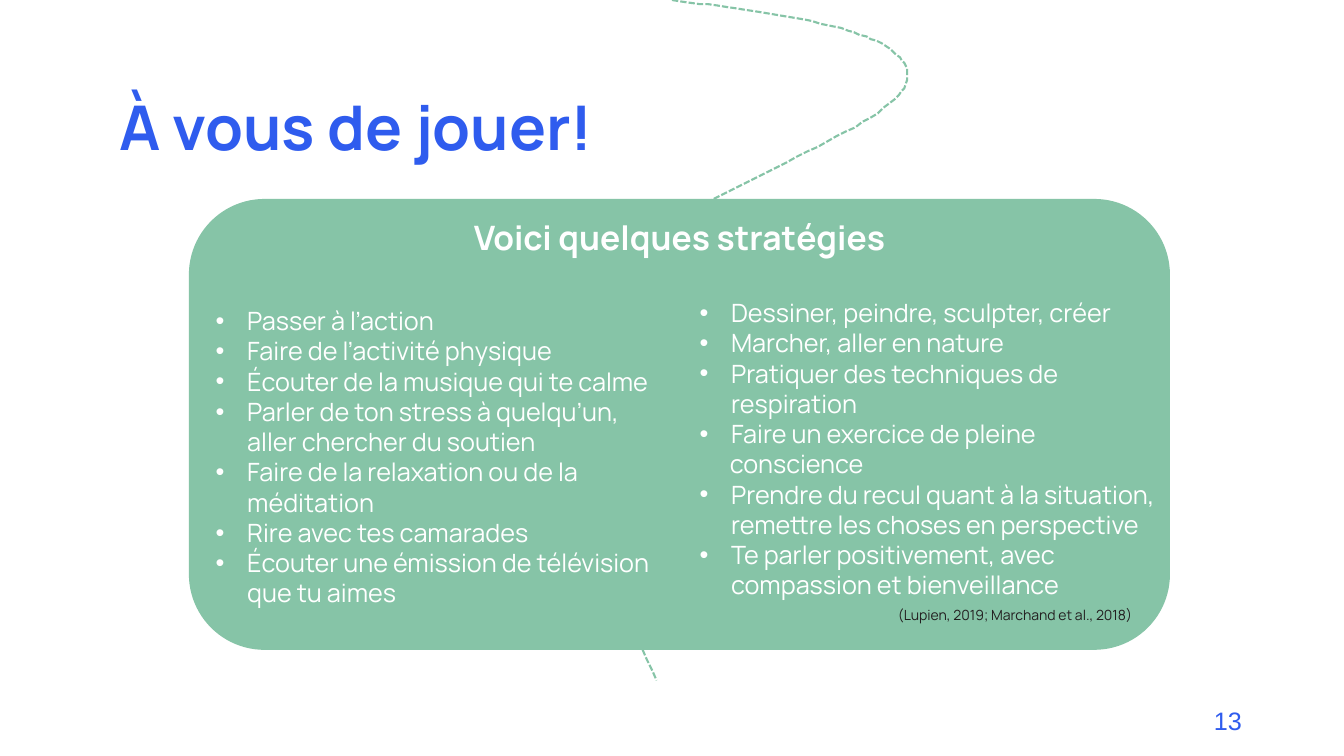
from lxml import etree
from pptx import Presentation, util as u
from pptx.dml import color
from pptx.enum import dml, shapes, text
from pptx.oxml import ns

THEME = {
    "blue": color.RGBColor.from_string("2F5CEE"),
    "green": color.RGBColor.from_string("86C4A7"),
    "white": color.RGBColor.from_string("FFFFFF"),
    "ink": color.RGBColor.from_string("231F20"),
    "font": "Manrope",
    "number_font": "Arial",
    "title": u.Pt(44),
    "heading": u.Pt(24),
    "body": u.Pt(18),
    "citation": u.Pt(10),
}


def apply(target, values):
    for name, value in values.items():
        setattr(target, name, value)


def write(box, place, lines, tone, size, para_format, frame_format=None, bold=False, face="font"):
    apply(box, dict(zip(("left", "top", "width", "height"), map(u.Pt, place))))
    frame = box.text_frame
    apply(frame, {"word_wrap": True, "auto_size": text.MSO_AUTO_SIZE.NONE,
                  "vertical_anchor": text.MSO_ANCHOR.TOP,
                  "margin_left": u.Pt(7.2), "margin_right": u.Pt(7.2),
                  "margin_top": u.Pt(3.6), "margin_bottom": u.Pt(3.6)})
    apply(frame, frame_format or {})
    frame.text = "\n".join(lines)
    for para in frame.paragraphs:
        apply(para, {"space_before": u.Pt(0), **para_format})
        for span in para.runs:
            apply(span.font, {"name": THEME[face], "size": THEME[size], "bold": bold})
            span.font.color.rgb = THEME[tone]


deck = Presentation()
apply(deck, {"slide_width": u.Pt(960), "slide_height": u.Pt(540)})
page = deck.slides.add_slide(deck.slide_layouts.get_by_name("Two Content"))
title, left_list, right_list = page.placeholders

bends = [
    [(479.5, 0), (568.8, 11.5), (658, 23), (647.3, 59.8)],
    [(647.3, 59.8), (636.5, 96.5), (444.2, 150.5), (414, 221)],
    [(414, 221), (384.5, 292.3), (426.2, 388.8), (468.7, 486)],
]
steps = 40
trail_points = []
for bend in bends:
    for step in range(1, steps + 1):
        t = step / steps
        weights = ((1 - t) ** 3, 3 * t * (1 - t) ** 2, 3 * t ** 2 * (1 - t), t ** 3)
        trail_points.append([sum(w * point[axis] for w, point in zip(weights, bend)) for axis in (0, 1)])
builder = page.shapes.build_freeform(*bends[0][0], scale=u.Pt(1))
builder.add_line_segments(trail_points, close=False)
trail = builder.convert_to_shape()
trail.shadow.inherit = False
trail.fill.background()
trail.line.color.rgb = THEME["green"]
apply(trail.line, {"width": u.Pt(1.5), "dash_style": dml.MSO_LINE.SQUARE_DOT})

panel = page.shapes.add_shape(shapes.MSO_SHAPE.ROUNDED_RECTANGLE,
                              u.Pt(135.4), u.Pt(142.6), u.Pt(699.8), u.Pt(321.1))
panel.shadow.inherit = False
panel.fill.solid()
panel.fill.fore_color.rgb = THEME["green"]
panel.line.color.rgb = THEME["green"]
panel.line.width = u.Pt(1)

for holder in (title, left_list, right_list):
    page.shapes.element.append(holder.element)

write(title, (77.8, 41, 828, 104.4), ["À vous de jouer!"], "blue", "title",
      {"alignment": text.PP_ALIGN.LEFT, "line_spacing": 0.9},
      {"vertical_anchor": text.MSO_ANCHOR.MIDDLE}, bold=True)

strategies = [
    (left_list, (146.9, 214.6, 334.1, 225.4), [
        "Passer à l’action",
        "Faire de l’activité physique",
        "Écouter de la musique qui te calme",
        "Parler de ton stress à quelqu’un, aller chercher du soutien",
        "Faire de la relaxation ou de la méditation",
        "Rire avec tes camarades",
        "Écouter une émission de télévision que tu aimes",
    ]),
    (right_list, (492.5, 208.8, 352.1, 225.4), [
        "Dessiner, peindre, sculpter, créer",
        "Marcher, aller en nature",
        "Pratiquer des techniques de respiration",
        "Faire un exercice de pleine",
        "conscience",
        "Prendre du recul quant à la situation, remettre les choses en perspective",
        "Te parler positivement, avec compassion et bienveillance",
    ]),
]
for holder, place, items in strategies:
    write(holder, place, items, "white", "body", {"alignment": text.PP_ALIGN.LEFT})
    for para, item in zip(holder.text_frame.paragraphs, items):
        continued = item == "conscience"
        para.level = int(continued)
        props = para._p.get_or_add_pPr()
        props.set("marL", str(u.Pt(21.6 if continued else 22.5)))
        props.set("indent", str(0 if continued else u.Pt(-22.5)))
        if continued:
            etree.SubElement(props, ns.qn("a:buNone"))
        else:
            etree.SubElement(props, ns.qn("a:buFont")).set("typeface", "Arial")
            etree.SubElement(props, ns.qn("a:buChar")).set("char", "•")

labels = [
    ((135.4, 151.4, 699.8, 36), "Voici quelques stratégies", "white", "heading",
     text.PP_ALIGN.CENTER, True, "font"),
    ((634.3, 429.8, 278.6, 19.4), "(Lupien, 2019; Marchand et al., 2018)", "ink", "citation",
     text.PP_ALIGN.JUSTIFY, False, "font"),
    ((678.2, 500.4, 216, 28.8), "13", "blue", "body",
     text.PP_ALIGN.RIGHT, False, "number_font"),
]
for place, words, tone, size, alignment, bold, face in labels:
    box = page.shapes.add_textbox(*map(u.Pt, place))
    write(box, place, [words], tone, size, {"alignment": alignment}, bold=bold, face=face)

deck.save("out.pptx")
